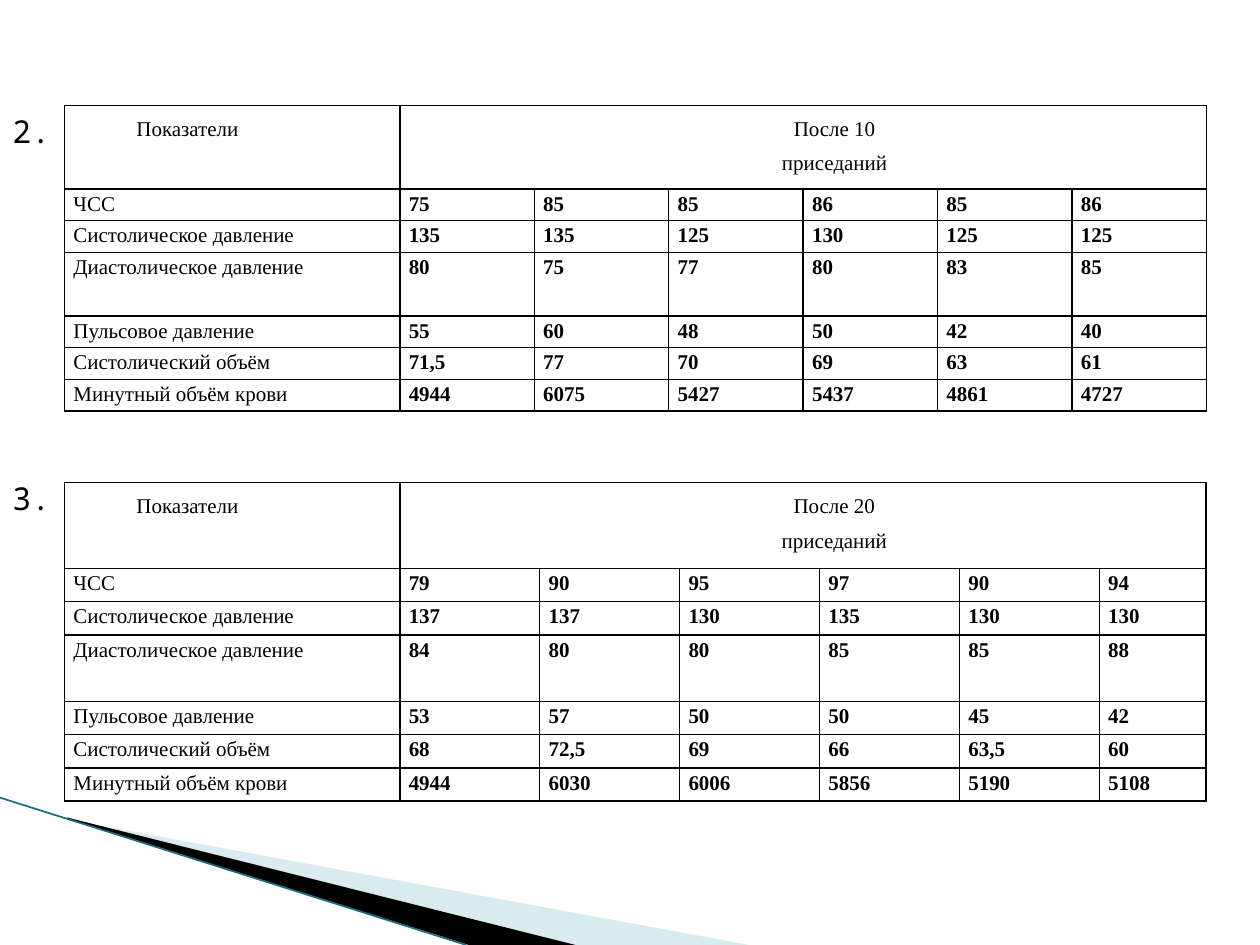
from dataclasses import dataclass

from lxml import etree
from pptx import Presentation
from pptx.dml.color import RGBColor
from pptx.enum.shapes import MSO_CONNECTOR
from pptx.enum.text import MSO_AUTO_SIZE, PP_ALIGN
from pptx.oxml.ns import qn
from pptx.util import Cm, Pt

BLACK = RGBColor(0x00, 0x00, 0x00)
PALE = RGBColor(0xA0, 0xCB, 0xDC)
TEAL = RGBColor(0x1A, 0x6F, 0x85)
SERIF, MONO = "Times New Roman", "Noto Sans Mono"
CENTER, LEFT = PP_ALIGN.CENTER, PP_ALIGN.LEFT
STRAIGHT = MSO_CONNECTOR.STRAIGHT
GROW = MSO_AUTO_SIZE.SHAPE_TO_FIT_TEXT

EDGE, WIDE, FOOT = 1.3, 23.01, 19.05
NAMES = ["ЧСС", "Систолическое давление", "Диастолическое давление",
         "Пульсовое давление", "Систолический объём", "Минутный объём крови"]
TALL = 3  # this row is twice as high as the others


@dataclass
class Trial:
    mark: str
    mark_top: float
    mark_width: float
    top: float
    head: str
    head_high: float
    row_high: float
    cols: list[float]
    rows: list[str]


TRIALS = [
    Trial("2.", 2.13, 1.4, 2.13, "После 10", 1.68, 0.64, [6.76] + [2.71] * 6,
          ["75 85 85 86 85 86", "135 135 125 130 125 125",
           "80 75 77 80 83 85", "55 60 48 50 42 40",
           "71,5 77 70 69 63 61", "4944 6075 5427 5437 4861 4727"]),
    Trial("3.", 9.53, 2.49, 9.73, "После 20", 1.73, 0.67,
          [6.76] + [2.82] * 5 + [2.15],
          ["79 90 95 97 90 94", "137 137 130 135 130 130",
           "84 80 80 85 85 88", "53 57 50 50 45 42",
           "68 72,5 69 66 63,5 60", "4944 6030 6006 5856 5190 5108"]),
]


@dataclass
class Wedge:
    points: list[tuple[float, float]]
    color: RGBColor
    alpha: int


WEDGES = [
    Wedge([(1.4, 16.53), (15.1, FOOT), (11.58, FOOT), (1.4, 16.51)], PALE, 40),
    Wedge([(1.35, 16.48), (11.6, FOOT), (9.45, FOOT), (1.37, 16.51)], BLACK, 100),
]


def add_run(para, text: str, size: int, font: str, bold: bool = False) -> None:
    run = para.add_run()
    run.text = text
    run.font.size, run.font.name, run.font.bold = Pt(size), font, bold
    run.font.color.rgb = BLACK


def draw_wedge(slide, wedge: Wedge) -> None:
    first, *rest = [(Cm(x), Cm(y)) for x, y in wedge.points]
    pen = slide.shapes.build_freeform(*first)
    pen.add_line_segments(rest, close=True)
    shape = pen.convert_to_shape()
    shape.shadow.inherit = False
    shape.line.fill.background()
    shape.fill.solid()
    shape.fill.fore_color.rgb = wedge.color
    if wedge.alpha < 100:
        color = shape.fill._xPr.find(".//" + qn("a:srgbClr"))
        etree.SubElement(color, qn("a:alpha"), val=str(wedge.alpha * 1000))


def draw_stripe(slide) -> None:
    line = slide.shapes.add_connector(STRAIGHT, 0, Cm(16.08), Cm(9.4), Cm(FOOT))
    line.line.color.rgb = TEAL
    line.line.width = Pt(1)
    etree.SubElement(line._element.spPr, qn("a:effectLst"))


def style_cell(cell) -> None:
    """Clear the fill, set the margins and rule all four sides."""
    cell.fill.background()
    cell.margin_left = cell.margin_right = Cm(0.18)
    cell.margin_top = cell.margin_bottom = 0
    props = cell._tc.get_or_add_tcPr()
    for spot, side in enumerate("LRTB"):
        rule = etree.Element(qn(f"a:ln{side}"), w=str(Pt(1)))
        fill = etree.SubElement(rule, qn("a:solidFill"))
        etree.SubElement(fill, qn("a:srgbClr"), val=str(BLACK))
        props.insert(spot, rule)


def write_head(cell, lines: list[str], align: PP_ALIGN) -> None:
    frame = cell.text_frame
    for i, text in enumerate(lines):
        para = frame.add_paragraph() if i else frame.paragraphs[0]
        props = para._p.get_or_add_pPr()
        props.set("marL", str(Cm(1.27)))
        props.set("indent", "0")
        para.alignment = align
        para.line_spacing = 1.5
        add_run(para, text, 12, SERIF)


def draw_table(slide, trial: Trial) -> None:
    highs = [trial.head_high] + [trial.row_high] * len(NAMES)
    highs[TALL] *= 2
    table = slide.shapes.add_table(
        len(highs), len(trial.cols), Cm(EDGE), Cm(trial.top),
        Cm(WIDE), Cm(sum(highs))).table
    table.first_row = table.horz_banding = False
    for col, width in zip(table.columns, trial.cols):
        col.width = Cm(width)
    for row, high in zip(table.rows, highs):
        row.height = Cm(high)
    for cell in table.iter_cells():
        style_cell(cell)
    table.cell(0, 1).merge(table.cell(0, len(trial.cols) - 1))
    write_head(table.cell(0, 0), ["Показатели"], LEFT)
    write_head(table.cell(0, 1), [trial.head, "приседаний"], CENTER)
    for r, (name, data) in enumerate(zip(NAMES, trial.rows), 1):
        for c, text in enumerate([name, *data.split()]):
            para = table.cell(r, c).text_frame.paragraphs[0]
            para.line_spacing = 1.15
            add_run(para, text, 12, SERIF, bold=c > 0)


def draw_mark(slide, trial: Trial) -> None:
    box = slide.shapes.add_textbox(
        0, Cm(trial.mark_top), Cm(trial.mark_width), Cm(1.03))
    frame = box.text_frame
    frame.word_wrap = True
    frame.auto_size = GROW
    add_run(frame.paragraphs[0], trial.mark, 18, MONO)


def main() -> None:
    deck = Presentation()
    deck.slide_width, deck.slide_height = Cm(25.4), Cm(FOOT)
    slide = deck.slides.add_slide(deck.slide_layouts[6])
    for wedge in WEDGES:
        draw_wedge(slide, wedge)
    draw_stripe(slide)
    for trial in TRIALS:
        draw_table(slide, trial)
    for trial in TRIALS:
        draw_mark(slide, trial)
    deck.save("out.pptx")


if __name__ == "__main__":
    main()
